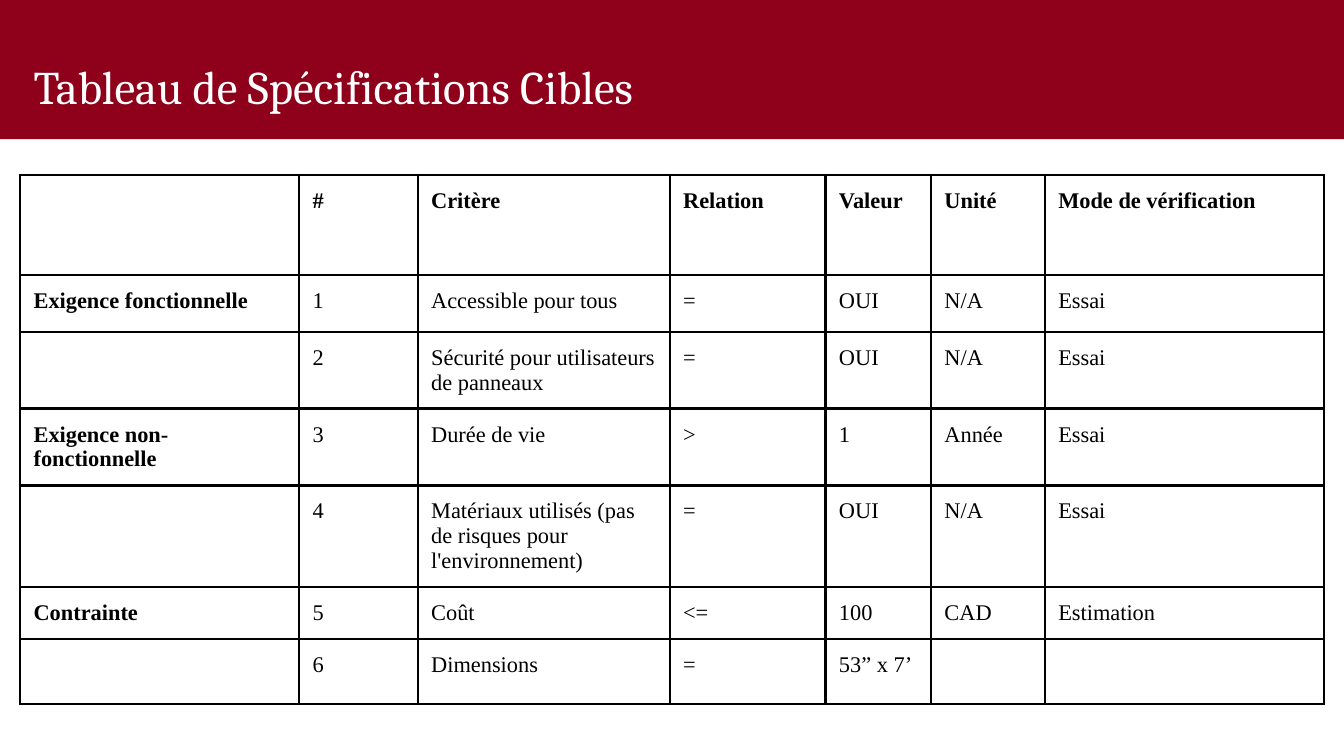
import dataclasses
import typing

import lxml.etree
import pptx
import pptx.dml.color
import pptx.enum.shapes
import pptx.enum.text
import pptx.oxml.ns
import pptx.util

Pt = pptx.util.Pt
RED, WHITE, BLACK = "8F001A", "FFFFFF", "000000"
INSET = dict.fromkeys(
    ("margin_left", "margin_top", "margin_right", "margin_bottom"), Pt(7.2))
COLS = (149.5, 63.5, 135, 83.5, 56.5, 61, 149.5)


@dataclasses.dataclass
class Row:
    high: float
    group: str
    cells: tuple[str, ...]
    bold: bool = False


ROWS = (
    Row(53.6, "", ("#", "Critère", "Relation", "Valeur", "Unité",
                   "Mode de vérification"), True),
    Row(30.5, "Exigence fonctionnelle",
        ("1", "Accessible pour tous", "=", "OUI", "N/A", "Essai")),
    Row(40.8, "", ("2", "Sécurité pour utilisateurs de panneaux",
                   "=", "OUI", "N/A", "Essai")),
    Row(41.2, "Exigence non- fonctionnelle",
        ("3", "Durée de vie", ">", "1", "Année", "Essai")),
    Row(54.2, "", ("4", "Matériaux utilisés (pas de risques pour l'environnement)",
                   "=", "OUI", "N/A", "Essai")),
    Row(27.8, "Contrainte", ("5", "Coût", "<=", "100", "CAD", "Estimation")),
    Row(34.8, "", ("6", "Dimensions", "=", "53” x 7’", "", "")),
)


def tint(code: str) -> pptx.dml.color.RGBColor:
    return pptx.dml.color.RGBColor.from_string(code)


def apply(thing: typing.Any, values: dict[str, typing.Any]) -> None:
    """Set each named attribute on the thing."""
    for name, value in values.items():
        setattr(thing, name, value)


def paint(thing: typing.Any, code: str) -> None:
    thing.fill.solid()
    thing.fill.fore_color.rgb = tint(code)


def write(frame: typing.Any, text: str, code: str, **font: typing.Any) -> None:
    run = frame.paragraphs[0].add_run()
    run.text = text
    apply(run.font, font)
    run.font.color.rgb = tint(code)


def edge(cell: typing.Any, width: float = 1.5) -> None:
    """Draw a border on all four sides of a cell."""
    props = cell._tc.get_or_add_tcPr()
    qn = pptx.oxml.ns.qn
    for spot, side in enumerate("LRTB"):
        line = lxml.etree.Element(qn(f"a:ln{side}"), w=str(Pt(width)))
        fill = lxml.etree.SubElement(line, qn("a:solidFill"))
        lxml.etree.SubElement(fill, qn("a:srgbClr"), val=BLACK)
        props.insert(spot, line)


def fill_cell(cell: typing.Any, text: str, bold: bool) -> None:
    paint(cell, WHITE)
    edge(cell)
    if text:
        apply(cell, INSET)
        write(cell.text_frame, text, BLACK,
              name="Times New Roman", size=Pt(12), bold=bold)


def draw_grid(slide: typing.Any) -> None:
    frame = slide.shapes.add_table(
        len(ROWS), len(COLS), Pt(10.8), Pt(93.8),
        Pt(sum(COLS)), Pt(sum(row.high for row in ROWS)))
    grid = frame.table
    apply(grid, {"first_row": False, "horz_banding": False})
    for col, wide in zip(grid.columns, COLS):
        col.width = Pt(wide)
    for r, row in enumerate(ROWS):
        grid.rows[r].height = Pt(row.high)
        for c, text in enumerate((row.group, *row.cells)):
            fill_cell(grid.cell(r, c), text, row.bold or c == 0)


def draw_band(slide: typing.Any) -> None:
    band = slide.shapes.add_shape(
        pptx.enum.shapes.MSO_SHAPE.RECTANGLE,
        Pt(-5.8), Pt(-22.6), Pt(731.5), Pt(97.2))
    band.shadow.inherit = False
    paint(band, RED)
    band.line.fill.background()


def draw_title(slide: typing.Any) -> None:
    title = slide.shapes.title
    apply(title, {"left": Pt(10.8), "top": Pt(23.8),
                  "width": Pt(624.2), "height": Pt(44.6)})
    frame = title.text_frame
    apply(frame, INSET | {
        "word_wrap": True,
        "auto_size": pptx.enum.text.MSO_AUTO_SIZE.SHAPE_TO_FIT_TEXT,
        "vertical_anchor": pptx.enum.text.MSO_ANCHOR.TOP})
    frame.paragraphs[0].alignment = pptx.enum.text.PP_ALIGN.LEFT
    write(frame, "Tableau de Spécifications Cibles", WHITE,
          name="Cambria", size=Pt(25))
    # The title lies above the band.
    title.element.getparent().append(title.element)


def main() -> None:
    deck = pptx.Presentation()
    apply(deck, {"slide_width": Pt(720), "slide_height": Pt(405)})
    slide = deck.slides.add_slide(deck.slide_layouts[5])
    draw_band(slide)
    draw_grid(slide)
    draw_title(slide)
    deck.save("out.pptx")


if __name__ == "__main__":
    main()
